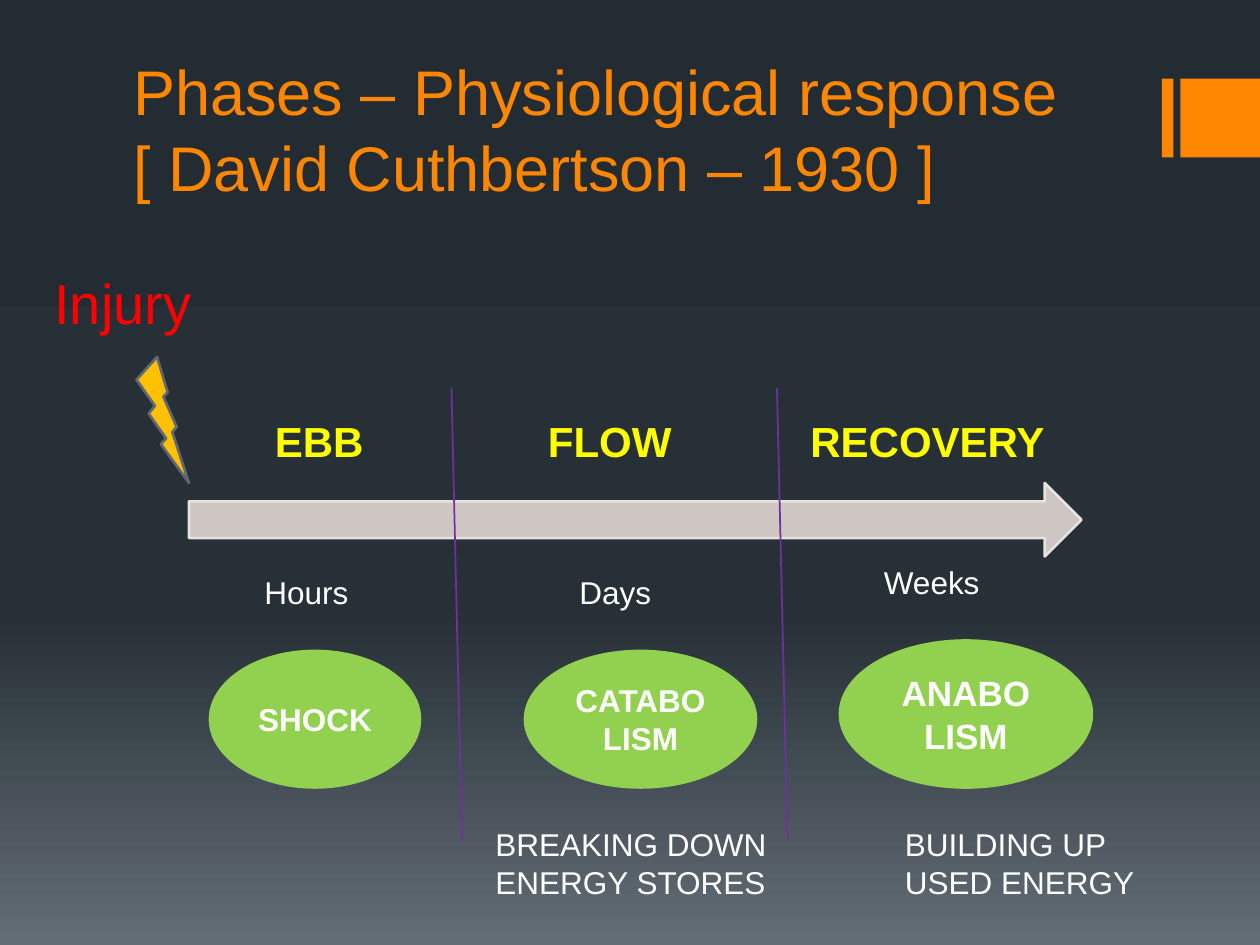
from copy import deepcopy
from dataclasses import dataclass

from lxml.etree import SubElement
from pptx import Presentation
from pptx.dml.color import RGBColor
from pptx.enum.shapes import MSO_CONNECTOR, MSO_SHAPE
from pptx.enum.text import MSO_ANCHOR, MSO_AUTO_SIZE, PP_ALIGN
from pptx.oxml.ns import qn
from pptx.shapes.autoshape import Shape
from pptx.slide import Slide
from pptx.text.text import TextFrame
from pptx.util import Pt


@dataclass(frozen=True)
class Theme:
    font: str = "Arial"
    backdrop: tuple = ((0, "242C33"), (0.65, "273037"), (1, "636D76"))
    accent: str = "FF8600"
    injury: str = "FF0000"
    bolt: str = "FFC000"
    bolt_edge: str = "616873"
    timeline: str = "CDC6C3"
    timeline_edge: str = "E6E2E1"
    phase: str = "FFFF00"
    state: str = "92D050"
    divider: str = "7030A0"
    text: str = "FFFFFF"
    title_size: int = 36
    injury_size: int = 32
    phase_size: int = 24
    body_size: int = 18
    outline: float = 1.5
    divider_width: float = 1


@dataclass(frozen=True)
class Box:
    left: float
    top: float
    width: float
    height: float

    def lengths(self) -> tuple:
        return Pt(self.left), Pt(self.top), Pt(self.width), Pt(self.height)


@dataclass(frozen=True)
class Phase:
    name: str
    name_box: Box
    duration: str
    duration_box: Box
    state: str
    state_box: Box
    state_size: int = 18
    effect: str = ""
    effect_box: Box | None = None


THEME = Theme()
PHASES = (
    Phase("EBB", Box(150, 234, 96, 36), "Hours", Box(144, 324, 66, 29),
          "SHOCK", Box(120, 372, 120, 78)),
    Phase("FLOW", Box(306, 234, 120, 36), "Days", Box(324, 324, 66, 29),
          "CATABOLISM", Box(300, 372, 132, 78),
          effect="BREAKING DOWN ENERGY STORES", effect_box=Box(276, 468, 192, 51)),
    Phase("RECOVERY", Box(456, 234, 150, 36), "Weeks", Box(498, 318, 84, 29),
          "ANABO LISM", Box(480, 366, 144, 84), state_size=20,
          effect="BUILDING UP USED ENERGY", effect_box=Box(510, 468, 162, 51)),
)
ACCENT_BARS = (Box(664, 45, 6.5, 45), Box(674.5, 45, 45.5, 45))
DIVIDER_LEFTS = (258, 444)


def write(frame: TextFrame, text: str, *, size: float, color: str = THEME.text,
          bold: bool = False, align: PP_ALIGN = PP_ALIGN.LEFT,
          anchor: MSO_ANCHOR = MSO_ANCHOR.TOP) -> None:
    frame.word_wrap = True
    frame.vertical_anchor = anchor
    paragraph = frame.paragraphs[0]
    paragraph.text = text
    paragraph.alignment = align
    for run in paragraph.runs:
        run.font.name = THEME.font
        run.font.size = Pt(size)
        run.font.bold = bold
        run.font.color.rgb = RGBColor.from_string(color)


def add_label(slide: Slide, box: Box, text: str, **text_format) -> None:
    frame = slide.shapes.add_textbox(*box.lengths()).text_frame
    write(frame, text, **text_format)
    frame.auto_size = MSO_AUTO_SIZE.SHAPE_TO_FIT_TEXT


def add_preset(slide: Slide, preset: MSO_SHAPE, box: Box, fill: str,
               edge: str | None = None) -> Shape:
    shape = slide.shapes.add_shape(preset, *box.lengths())
    shape.shadow.inherit = False
    shape.fill.solid()
    shape.fill.fore_color.rgb = RGBColor.from_string(fill)
    if edge:
        shape.line.color.rgb = RGBColor.from_string(edge)
        shape.line.width = Pt(THEME.outline)
    else:
        shape.line.fill.background()
    return shape


def add_divider(slide: Slide, left: float) -> None:
    divider = slide.shapes.add_connector(
        MSO_CONNECTOR.STRAIGHT, Pt(left), Pt(222), Pt(left + 6), Pt(480))
    divider.line.color.rgb = RGBColor.from_string(THEME.divider)
    divider.line.width = Pt(THEME.divider_width)
    SubElement(divider._element.spPr, qn("a:effectLst"))


def paint_backdrop(slide: Slide) -> None:
    fill = slide.background.fill
    fill.gradient()
    fill.gradient_angle = 270
    first_stop = slide._element.find(f".//{qn('a:gs')}")
    first_stop.addnext(deepcopy(first_stop))
    for stop, (position, color) in zip(fill.gradient_stops, THEME.backdrop):
        stop.position = position
        stop.color.rgb = RGBColor.from_string(color)


def add_title(slide: Slide) -> None:
    title = slide.shapes.title
    title.left, title.top, title.width, title.height = Box(69, 29, 576, 91).lengths()
    write(title.text_frame,
          "Phases – Physiological response\n[ David Cuthbertson – 1930 ]",
          size=THEME.title_size, color=THEME.accent, anchor=MSO_ANCHOR.BOTTOM)


def add_phase(slide: Slide, phase: Phase) -> None:
    add_label(slide, phase.name_box, phase.name,
              size=THEME.phase_size, color=THEME.phase, bold=True)
    add_label(slide, phase.duration_box, phase.duration, size=THEME.body_size)
    state = add_preset(slide, MSO_SHAPE.OVAL, phase.state_box, THEME.state, THEME.state)
    write(state.text_frame, phase.state, size=phase.state_size, bold=True,
          align=PP_ALIGN.CENTER, anchor=MSO_ANCHOR.MIDDLE)
    if phase.effect_box:
        add_label(slide, phase.effect_box, phase.effect, size=THEME.body_size)


def main() -> None:
    deck = Presentation()
    deck.slide_width, deck.slide_height = Pt(720), Pt(540)
    slide = deck.slides.add_slide(deck.slide_layouts[5])
    paint_backdrop(slide)
    for bar in ACCENT_BARS:
        add_preset(slide, MSO_SHAPE.RECTANGLE, bar, THEME.accent)
    add_title(slide)
    add_preset(slide, MSO_SHAPE.RIGHT_ARROW, Box(108, 276, 510, 42),
               THEME.timeline, THEME.timeline_edge)
    add_preset(slide, MSO_SHAPE.LIGHTNING_BOLT, Box(78, 204, 30, 72),
               THEME.bolt, THEME.bolt_edge)
    add_label(slide, Box(24, 150, 156, 46), "Injury",
              size=THEME.injury_size, color=THEME.injury)
    for phase in PHASES:
        add_phase(slide, phase)
    for left in DIVIDER_LEFTS:
        add_divider(slide, left)
    deck.save("out.pptx")


if __name__ == "__main__":
    main()
